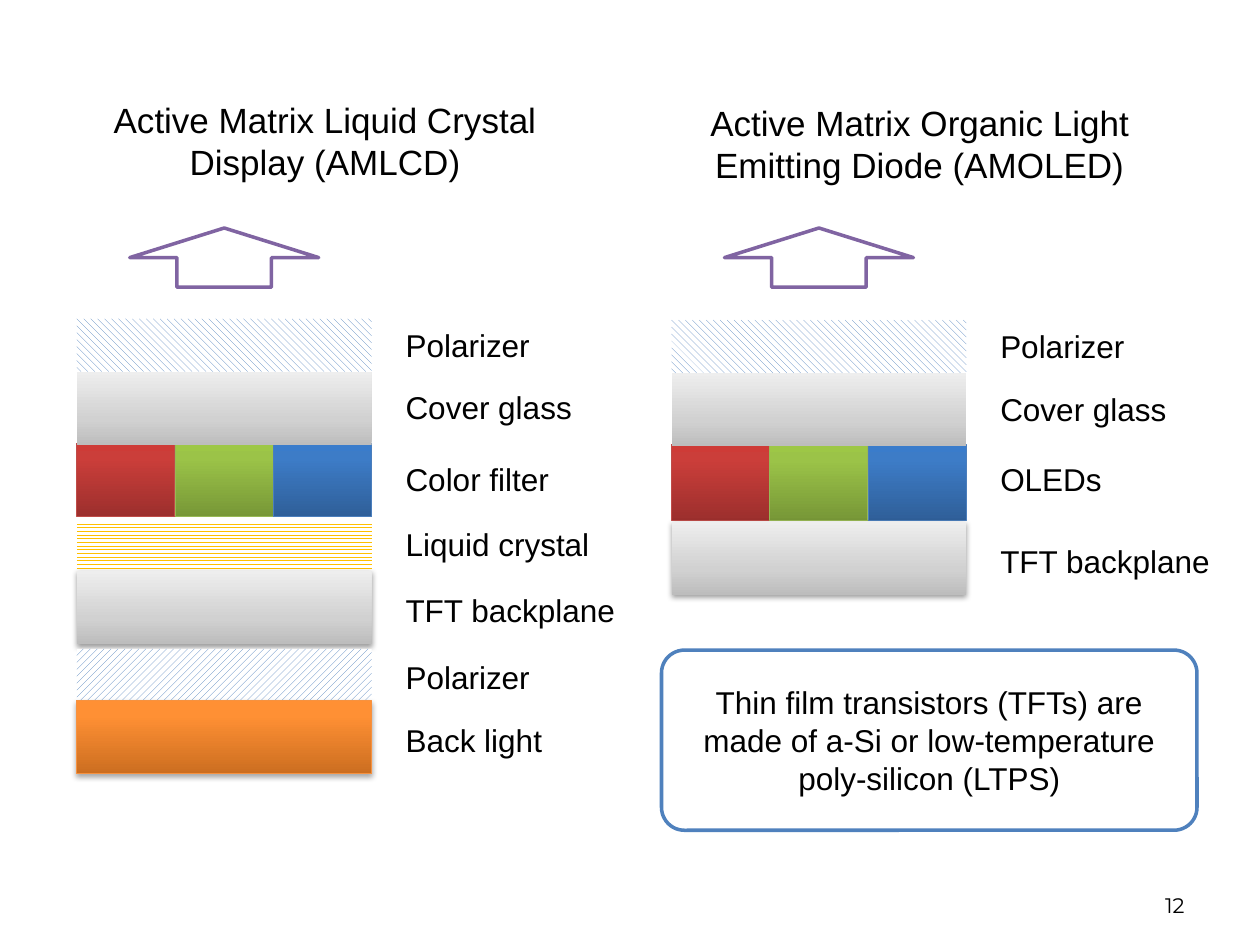
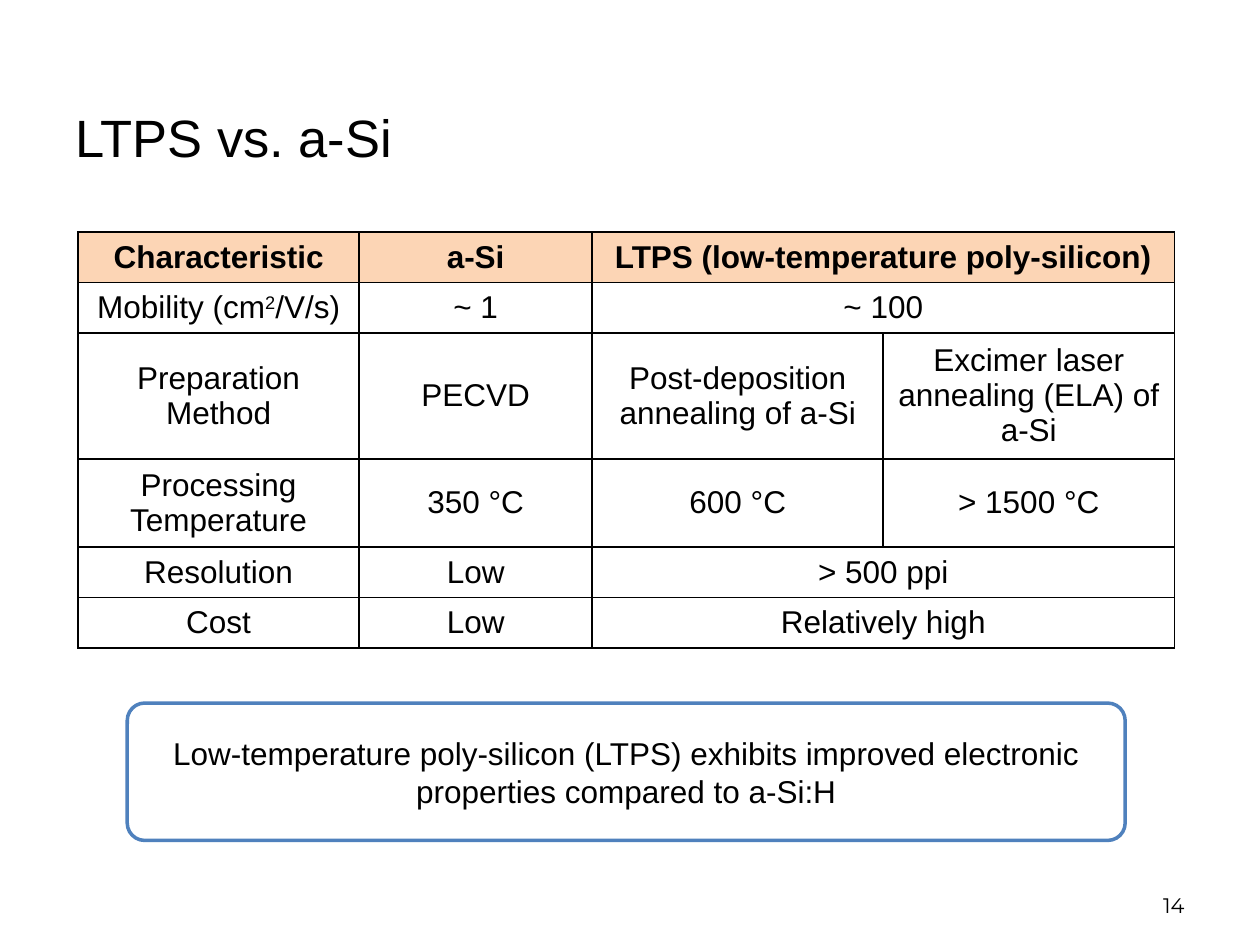
import dataclasses
from typing import Any, NamedTuple, Optional

import lxml.etree
import copy
import pptx
import pptx.dml.color
import pptx.enum.dml
import pptx.enum.shapes
import pptx.enum.text
import pptx.oxml.ns
import pptx.util

SCALE = 9144  # EMU in one px, 100 px to the inch
HUES = {
    "ink": "000000", "paper": "FFFFFF", "frame": "4F81BD", "arrow": "8064A2",
    "crystal": "FFC000", "head": "FCD5B5",
}
KIND = pptx.enum.shapes.MSO_SHAPE
ALIGN = pptx.enum.text.PP_ALIGN
ANCHOR = pptx.enum.text.MSO_ANCHOR
PATTERN = pptx.enum.dml.MSO_PATTERN
qn = pptx.oxml.ns.qn


class Box(NamedTuple):
    x: int
    y: int
    w: int
    h: int


class Shade(NamedTuple):
    alpha: int
    blur: int
    drop: int


@dataclasses.dataclass
class Look:
    stops: tuple = ()
    pattern: Any = None
    fore: str = "frame"
    edge: Optional[str] = None
    shade: Optional[Shade] = None


@dataclasses.dataclass
class Layer:
    label: str
    y: int
    h: int
    looks: tuple
    text_y: int


@dataclasses.dataclass
class Stack:
    x: int
    title: str
    title_y: int
    layers: tuple


GREY = ((0, "BDBDBD"), (35, "D1D1D1"), (100, "EEEEEE"))
GLASS = (Look(GREY),)
PLANE = (Look(GREY, shade=Shade(38, 40000, 20000)),)
DOWN = (Look(pattern=PATTERN.WIDE_DOWNWARD_DIAGONAL),)
UP = (Look(pattern=PATTERN.WIDE_UPWARD_DIAGONAL),)
CRYSTAL = (Look(pattern=PATTERN.ZIG_ZAG, fore="crystal"),)
LIGHT = (Look(((0, "CC6E20"), (80, "FF9034"), (100, "FF9136")), edge="F69240",
              shade=Shade(35, 40000, 23000)),)
PIXELS = (
    Look(((0, "9C2F2D"), (80, "CB3E3A"), (100, "CE3B37")), edge="BF4C48"),
    Look(((0, "779737"), (80, "9BC348"), (100, "9DC746")), edge="98B955"),
    Look(((0, "2F5F99"), (80, "3D7CC7"), (100, "3A7CCB")), edge="4B7EBC"),
)
STACKS = (
    Stack(61, "Active Matrix Liquid Crystal Display (AMLCD)", 73, (
        Layer("Color filter", 352, 58, PIXELS, 360),
        Layer("Cover glass", 295, 58, GLASS, 303),
        Layer("Polarizer", 253, 42, DOWN, 254),
        Layer("Liquid crystal", 413, 42, CRYSTAL, 412),
        Layer("TFT backplane", 453, 58, PLANE, 464),
        Layer("Polarizer", 515, 42, UP, 517),
        Layer("Back light", 556, 58, LIGHT, 567),
    )),
    Stack(533, "Active Matrix Organic Light Emitting Diode (AMOLED)", 76, (
        Layer("OLEDs", 353, 60, PIXELS, 360),
        Layer("Cover glass", 296, 58, GLASS, 305),
        Layer("Polarizer", 254, 42, DOWN, 255),
        Layer("TFT backplane", 414, 58, PLANE, 425),
    )),
)
COLS = (223, 185, 231, 231)
ROWS = (40, 40, 94, 66, 40, 40)
# None joins a cell to the one on its left
CELLS = (
    ("Characteristic", "a-Si", "LTPS (low-temperature poly-silicon)", None),
    (("Mobility (cm", "2", "/V/s)"), "~ 1", "~ 100", None),
    ("Preparation Method", "PECVD", "Post-deposition annealing of a-Si",
     "Excimer laser annealing (ELA) of a-Si"),
    ("Processing Temperature", "350 °C", "600 °C", "> 1500 °C"),
    ("Resolution", "Low", "> 500 ppi", None),
    ("Cost", "Low", "Relatively high", None),
)


def px(n: int) -> int:
    return pptx.util.Emu(n * SCALE)


def place(box: Box) -> tuple:
    return tuple(px(n) for n in box)


def rgb(name: str) -> Any:
    return pptx.dml.color.RGBColor.from_string(HUES.get(name, name))


def apply(item: Any, form: dict) -> None:
    for key, value in form.items():
        setattr(item, key, value)


def write(frame: Any, text: Any, size: int = 18, font: str = "Arial",
          bold: bool = False, para: Optional[dict] = None) -> None:
    """Fill the first paragraph; the middle one of three runs is raised."""
    first = frame.paragraphs[0]
    apply(first, para or {})
    for i, part in enumerate((text,) if isinstance(text, str) else text):
        run = first.add_run()
        run.text = part
        apply(run.font, {"size": pptx.util.Pt(size), "name": font, "bold": bold})
        run.font.color.rgb = rgb("ink")
        if i == 1:
            run._r.get_or_add_rPr().set("baseline", "30000")


def label(slide: Any, box: Box, text: str, form: dict, **style: Any) -> None:
    frame = slide.shapes.add_textbox(*place(box)).text_frame
    apply(frame, form)
    write(frame, text, **style)


def shape(slide: Any, kind: Any, box: Box, edge: Optional[str] = None,
          width: float = 2) -> Any:
    item = slide.shapes.add_shape(kind, *place(box))
    item.shadow.inherit = False
    item.fill.solid()
    item.fill.fore_color.rgb = rgb("paper")
    if edge:
        item.line.color.rgb = rgb(edge)
        item.line.width = pptx.util.Pt(width)
    else:
        item.line.fill.background()
    return item


def slab(slide: Any, box: Box, look: Look) -> None:
    item = shape(slide, KIND.RECTANGLE, box, look.edge, 0.75)
    fill, props = item.fill, item._element.spPr
    if look.pattern is not None:
        fill.patterned()
        fill.pattern = look.pattern
        fill.fore_color.rgb = rgb(look.fore)
        fill.back_color.rgb = rgb("paper")
    else:
        fill.gradient()
        fill.gradient_angle = 90
        stops = props.find(".//" + qn("a:gsLst"))
        stops.append(copy.deepcopy(stops[-1]))
        for stop, (spot, hue) in zip(fill.gradient_stops, look.stops):
            stop.position = spot / 100
            stop.color.rgb = rgb(hue)
    if look.shade:
        cast = lxml.etree.SubElement(
            props.find(qn("a:effectLst")), qn("a:outerShdw"),
            blurRad=str(look.shade.blur), dist=str(look.shade.drop),
            dir="5400000", rotWithShape="0")
        tint = lxml.etree.SubElement(cast, qn("a:srgbClr"), val=HUES["ink"])
        lxml.etree.SubElement(tint, qn("a:alpha"), val=str(look.shade.alpha * 1000))


def note(slide: Any, box: Box, text: str) -> None:
    item = shape(slide, KIND.ROUNDED_RECTANGLE, box, "frame")
    item.adjustments[0] = 0.127
    apply(item.text_frame, {"word_wrap": True, "vertical_anchor": ANCHOR.MIDDLE})
    write(item.text_frame, text, para={
        "alignment": ALIGN.CENTER, "line_spacing": pptx.util.Pt(21.7)})


def number(slide: Any, text: str) -> None:
    label(slide, Box(717, 683, 233, 50), text,
          {"word_wrap": True, "vertical_anchor": ANCHOR.BOTTOM},
          size=12, font="Montserrat", para={"alignment": ALIGN.RIGHT})


def stack(slide: Any, data: Stack) -> None:
    fit = pptx.enum.text.MSO_AUTO_SIZE.SHAPE_TO_FIT_TEXT
    for layer in data.layers:
        wide = 234 // len(layer.looks)
        for i, look in enumerate(layer.looks):
            slab(slide, Box(data.x + i * wide, layer.y, wide, layer.h), look)
        label(slide, Box(data.x + 251, layer.text_y, 188, 40), layer.label,
              {"word_wrap": False, "auto_size": fit})
    label(slide, Box(data.x, data.title_y, 394, 77), data.title,
          {"word_wrap": True, "auto_size": fit}, size=20,
          para={"alignment": ALIGN.CENTER, "line_spacing": pptx.util.Pt(24)})
    shape(slide, KIND.UP_ARROW, Box(data.x + 42, 181, 150, 47), "arrow")


def border(cell: Any, sides: str) -> None:
    props = cell._tc.get_or_add_tcPr()
    for i, side in enumerate(sides):
        line = lxml.etree.Element(qn("a:ln" + side), w="12700")
        fill = lxml.etree.SubElement(line, qn("a:solidFill"))
        lxml.etree.SubElement(fill, qn("a:srgbClr"), val=HUES["ink"])
        props.insert(i, line)


def grid(slide: Any) -> None:
    box = Box(62, 184, sum(COLS), sum(ROWS))
    table = slide.shapes.add_table(len(ROWS), len(COLS), *place(box)).table
    apply(table, {"first_row": False, "horz_banding": False})
    for col, wide in zip(table.columns, COLS):
        col.width = px(wide)
    for r, (row, high) in enumerate(zip(CELLS, ROWS)):
        table.rows[r].height = px(high)
        for c, text in enumerate(row):
            cell = table.cell(r, c)
            cell.vertical_anchor = ANCHOR.MIDDLE
            if r == 0:
                cell.fill.solid()
                cell.fill.fore_color.rgb = rgb("head")
            else:
                cell.fill.background()
            border(cell, "RTB" if text is None else "LRTB")
            if text is None:
                table.cell(r, c - 1).merge(cell)
            else:
                write(cell.text_frame, text, bold=r == 0,
                      para={"alignment": ALIGN.CENTER})


def main() -> None:
    deck = pptx.Presentation()
    apply(deck, {"slide_width": px(1000), "slide_height": px(750)})
    blank = deck.slide_layouts[6]

    # Display layer stacks
    page = deck.slides.add_slide(blank)
    for data in STACKS:
        stack(page, data)
    note(page, Box(525, 516, 425, 143), "Thin film transistors (TFTs) are made of "
         "a-Si or low-temperature poly-silicon (LTPS)")
    number(page, "12")

    # Material comparison
    page = deck.slides.add_slide(blank)
    label(page, Box(50, 50, 883, 117), "LTPS vs. a-Si",
          {"word_wrap": True, "vertical_anchor": ANCHOR.MIDDLE}, size=30)
    number(page, "14")
    grid(page)
    note(page, Box(101, 558, 792, 109), "Low-temperature poly-silicon (LTPS) "
         "exhibits improved electronic properties compared to a-Si:H")
    deck.save("out.pptx")


if __name__ == "__main__":
    main()
